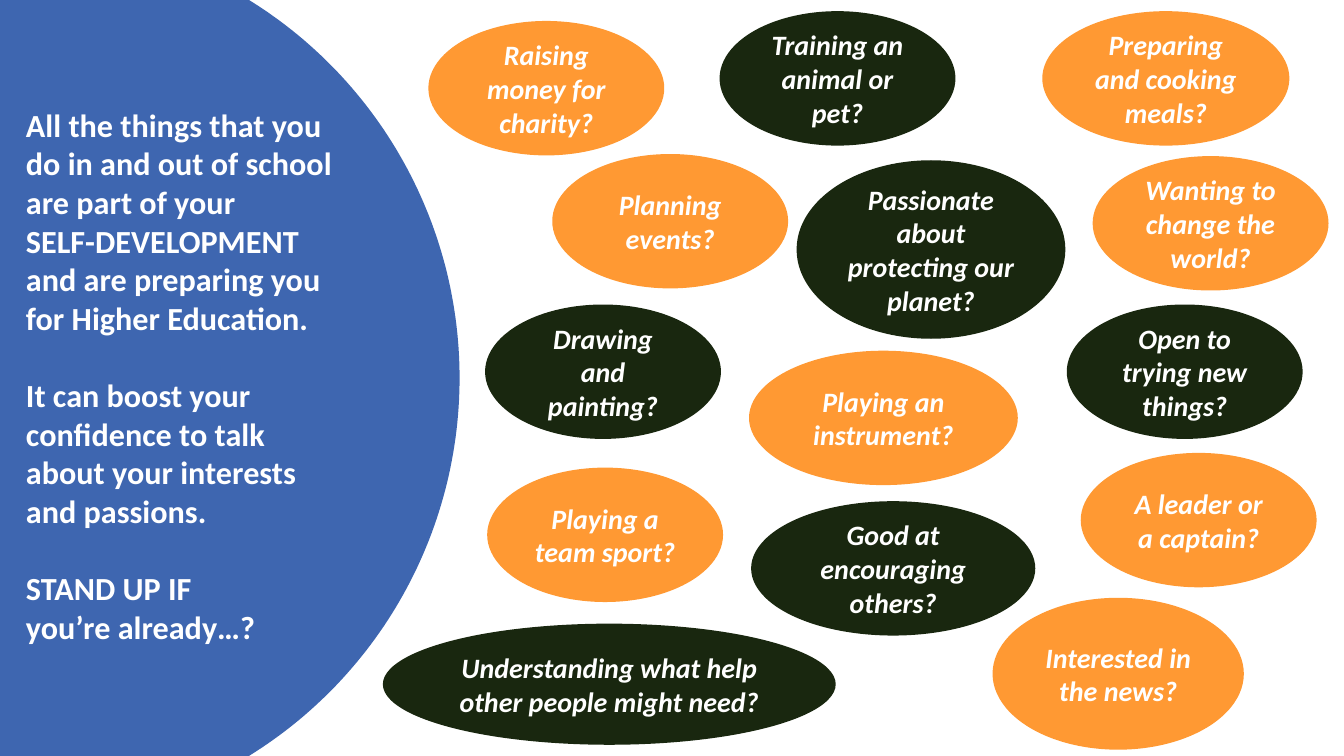
import math

from pptx import Presentation
from pptx.dml.color import RGBColor
from pptx.enum import shapes, text
from pptx.util import Pt

BLUE = RGBColor(0x3E, 0x66, 0xB0)
ORANGE = RGBColor(0xFF, 0x99, 0x33)
GREEN = RGBColor(0x19, 0x27, 0x0F)
WHITE = RGBColor(0xFF, 0xFF, 0xFF)
FONT = "Calibri"

WIDTH, HEIGHT = 960, 540
DISC_X, DISC_RADIUS, DISC_STEPS = 10.8, 317.5, 120
INTRO_SIZE, INTRO_GAP = 23, 27.6
OVAL_W, OVAL_H, OVAL_SIZE = 168.5, 96, 20

# (text, space before); \v is a line break
INTRO = [
    ("All the things that you do in and out of school are part of your \v"
     "SELF-DEVELOPMENT and are preparing you for Higher Education.", 0),
    ("It can boost your confidence to talk about your interests and passions.", INTRO_GAP),
    ("STAND UP IF", INTRO_GAP),
    ("you’re already…?", 0),
]

# text, fill, left, top, then width and height where they differ from the usual
OVALS = [
    ("Raising money for charity?", ORANGE, 306, 15),
    ("Training an animal or pet?", GREEN, 514, 8),
    ("Preparing and cooking meals?", ORANGE, 744.5, 8, 176.5),
    ("Wanting to change the world?", ORANGE, 780.5, 111.5),
    ("Passionate about protecting our planet?", GREEN, 569, 114.5, 192, 127.5),
    ("Planning events?", ORANGE, 394.5, 110),
    ("Drawing and painting?", GREEN, 346.5, 217.5),
    ("Playing an instrument?", ORANGE, 535, 250.5, 192),
    ("Open to trying new things?", GREEN, 762, 217.5),
    ("A leader or a captain?", ORANGE, 772, 323.5),
    ("Playing a team sport?", ORANGE, 348, 334),
    ("Interested in the news?", ORANGE, 709, 427, 179.5, 108.5),
    ("Good at encouraging others?", GREEN, 536.5, 358, 203),
    ("Understanding what help other people might need?", GREEN, 273.5, 445.5, 323.5, 86.5),
]


def fill_plain(sp, color):
    sp.shadow.inherit = False
    sp.fill.solid()
    sp.fill.fore_color.rgb = color
    sp.line.fill.background()


def set_font(p, size, italic=False):
    p.font.name, p.font.size, p.font.color.rgb = FONT, Pt(size), WHITE
    p.font.bold, p.font.italic = True, italic


def add_disc(slide):
    """Draw the part of a large disc that lies on the slide."""
    half_angle = math.asin(HEIGHT / 2 / DISC_RADIUS)
    angles = [half_angle * (2 * i / DISC_STEPS - 1) for i in range(DISC_STEPS + 1)]
    arc = [(Pt(DISC_X + DISC_RADIUS * math.cos(a)),
            Pt(HEIGHT / 2 + DISC_RADIUS * math.sin(a))) for a in angles]
    builder = slide.shapes.build_freeform(0, 0)
    builder.add_line_segments(arc + [(0, Pt(HEIGHT))], close=True)
    fill_plain(builder.convert_to_shape(), BLUE)


def add_intro(slide):
    tf = slide.shapes.add_textbox(Pt(11.5), Pt(71.5), Pt(235.5), Pt(425.5)).text_frame
    tf.word_wrap = True
    tf.auto_size = text.MSO_AUTO_SIZE.SHAPE_TO_FIT_TEXT
    for i, (words, gap) in enumerate(INTRO):
        p = tf.add_paragraph() if i else tf.paragraphs[0]
        p.text = words
        p.space_before = Pt(gap)
        set_font(p, INTRO_SIZE)


def add_oval(slide, words, color, left, top, width=OVAL_W, height=OVAL_H):
    sp = slide.shapes.add_shape(shapes.MSO_SHAPE.OVAL, Pt(left), Pt(top), Pt(width), Pt(height))
    fill_plain(sp, color)
    tf = sp.text_frame
    tf.word_wrap = True
    tf.vertical_anchor = text.MSO_ANCHOR.MIDDLE
    p = tf.paragraphs[0]
    p.text = words
    p.alignment = text.PP_ALIGN.CENTER
    set_font(p, OVAL_SIZE, italic=True)


def main():
    prs = Presentation()
    prs.slide_width, prs.slide_height = Pt(WIDTH), Pt(HEIGHT)
    slide = prs.slides.add_slide(prs.slide_layouts[6])
    add_disc(slide)
    add_intro(slide)
    for oval in OVALS:
        add_oval(slide, *oval)
    prs.save("out.pptx")


if __name__ == "__main__":
    main()
